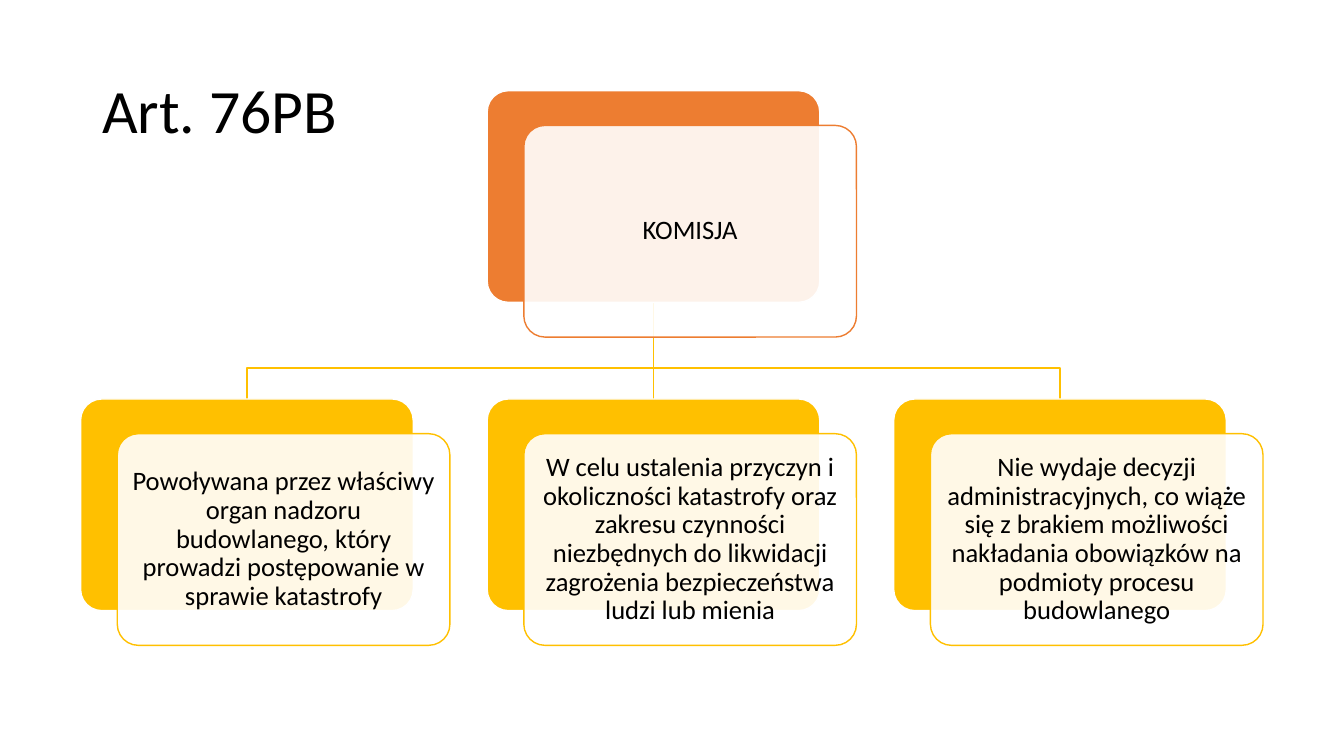
from dataclasses import dataclass

from lxml.etree import SubElement
from pptx import Presentation
from pptx.dml.color import RGBColor
from pptx.enum.shapes import MSO_CONNECTOR, MSO_SHAPE
from pptx.enum.text import MSO_ANCHOR, PP_ALIGN
from pptx.oxml.ns import qn
from pptx.shapes.autoshape import Shape
from pptx.slide import Slide
from pptx.text.text import TextFrame
from pptx.util import Pt

COLORS = {"orange": "ED7D31", "gold": "FFC000", "white": "FFFFFF", "black": "000000"}
FONT = "Calibri"

CARD_WIDTH, CARD_HEIGHT = 237.6, 151.2
FRONT_SHIFT_X, FRONT_SHIFT_Y = 26.2, 24.8
FIRST_LEFT, COLUMN_STEP = 57.6, 290.4
ROOT_TOP, CHILD_TOP = 64.8, 285
BEND_Y = 262.8


@dataclass(frozen=True)
class Card:
    column: int
    top: float
    color: str
    text: str

    @property
    def left(self) -> float:
        return FIRST_LEFT + self.column * COLUMN_STEP

    @property
    def center(self) -> float:
        return self.left + CARD_WIDTH / 2

    @property
    def bottom(self) -> float:
        return self.top + CARD_HEIGHT


ROOT = Card(1, ROOT_TOP, "orange", "KOMISJA")
CHILD_TEXTS = (
    "Powoływana przez właściwy organ nadzoru budowlanego, "
    "który prowadzi postępowanie w sprawie katastrofy",
    "W celu ustalenia przyczyn i okoliczności katastrofy oraz zakresu czynności "
    "niezbędnych do likwidacji zagrożenia bezpieczeństwa ludzi lub mienia",
    "Nie wydaje decyzji administracyjnych, co wiąże się z brakiem możliwości "
    "nakładania obowiązków na podmioty procesu budowlanego",
)
CHILDREN = [
    Card(column, CHILD_TOP, "gold", text) for column, text in enumerate(CHILD_TEXTS)
]


def rgb(name: str) -> RGBColor:
    return RGBColor.from_string(COLORS[name])


def write_text(
    frame: TextFrame,
    text: str,
    *,
    size: float,
    align: PP_ALIGN = PP_ALIGN.LEFT,
    inset: tuple[float, float] = (7.2, 3.6),
    space_after: float = 0,
) -> None:
    frame.word_wrap = True
    frame.vertical_anchor = MSO_ANCHOR.MIDDLE
    frame.margin_left = frame.margin_right = Pt(inset[0])
    frame.margin_top = frame.margin_bottom = Pt(inset[1])
    para = frame.paragraphs[0]
    para.alignment = align
    para.line_spacing = 0.9
    para.space_after = Pt(space_after)
    span = para.add_run()
    span.text = text
    span.font.name = FONT
    span.font.size = Pt(size)
    span.font.color.rgb = rgb("black")


def add_panel(
    page: Slide, left: float, top: float, *, fill: str, line: str, opacity: int = 100
) -> Shape:
    panel = page.shapes.add_shape(
        MSO_SHAPE.ROUNDED_RECTANGLE, Pt(left), Pt(top), Pt(CARD_WIDTH), Pt(CARD_HEIGHT)
    )
    panel.shadow.inherit = False
    panel.adjustments[0] = 0.1
    panel.fill.solid()
    panel.fill.fore_color.rgb = rgb(fill)
    panel.line.color.rgb = rgb(line)
    panel.line.width = Pt(1)
    if opacity < 100:
        color = panel.fill._xPr.find(".//" + qn("a:srgbClr"))
        SubElement(color, qn("a:alpha")).set("val", str(opacity * 1000))
    return panel


def add_card(page: Slide, card: Card) -> None:
    """Draw a solid back panel and a translucent front panel holding the text."""
    add_panel(page, card.left, card.top, fill=card.color, line="white")
    front = add_panel(
        page,
        card.left + FRONT_SHIFT_X,
        card.top + FRONT_SHIFT_Y,
        fill="white",
        line=card.color,
        opacity=90,
    )
    write_text(
        front.text_frame,
        card.text,
        size=19,
        align=PP_ALIGN.CENTER,
        inset=(5.7, 5.7),
        space_after=6.65,
    )


def add_branch(page: Slide, parent: Card, child: Card) -> None:
    """Link two cards: straight within a column, otherwise with two bends."""
    start = Pt(parent.center), Pt(parent.bottom)
    end = Pt(child.center), Pt(child.top)
    if parent.column == child.column:
        branch = page.shapes.add_connector(MSO_CONNECTOR.STRAIGHT, *start, *end)
        SubElement(branch._element.spPr, qn("a:effectLst"))
    else:
        builder = page.shapes.build_freeform(*start)
        bends = [(start[0], Pt(BEND_Y)), (end[0], Pt(BEND_Y))]
        builder.add_line_segments([*bends, end], close=False)
        branch = builder.convert_to_shape()
        branch.shadow.inherit = False
        branch.fill.background()
    branch.line.color.rgb = rgb(child.color)
    branch.line.width = Pt(1)


def main() -> None:
    deck = Presentation()
    deck.slide_width, deck.slide_height = Pt(960), Pt(540)
    page = deck.slides.add_slide(deck.slide_layouts[6])

    title = page.shapes.add_textbox(Pt(66), Pt(28.8), Pt(828), Pt(104.4))
    write_text(title.text_frame, "Art. 76PB", size=44)

    for child in reversed(CHILDREN):
        add_branch(page, ROOT, child)
    for card in (ROOT, *CHILDREN):
        add_card(page, card)

    deck.save("out.pptx")


if __name__ == "__main__":
    main()
